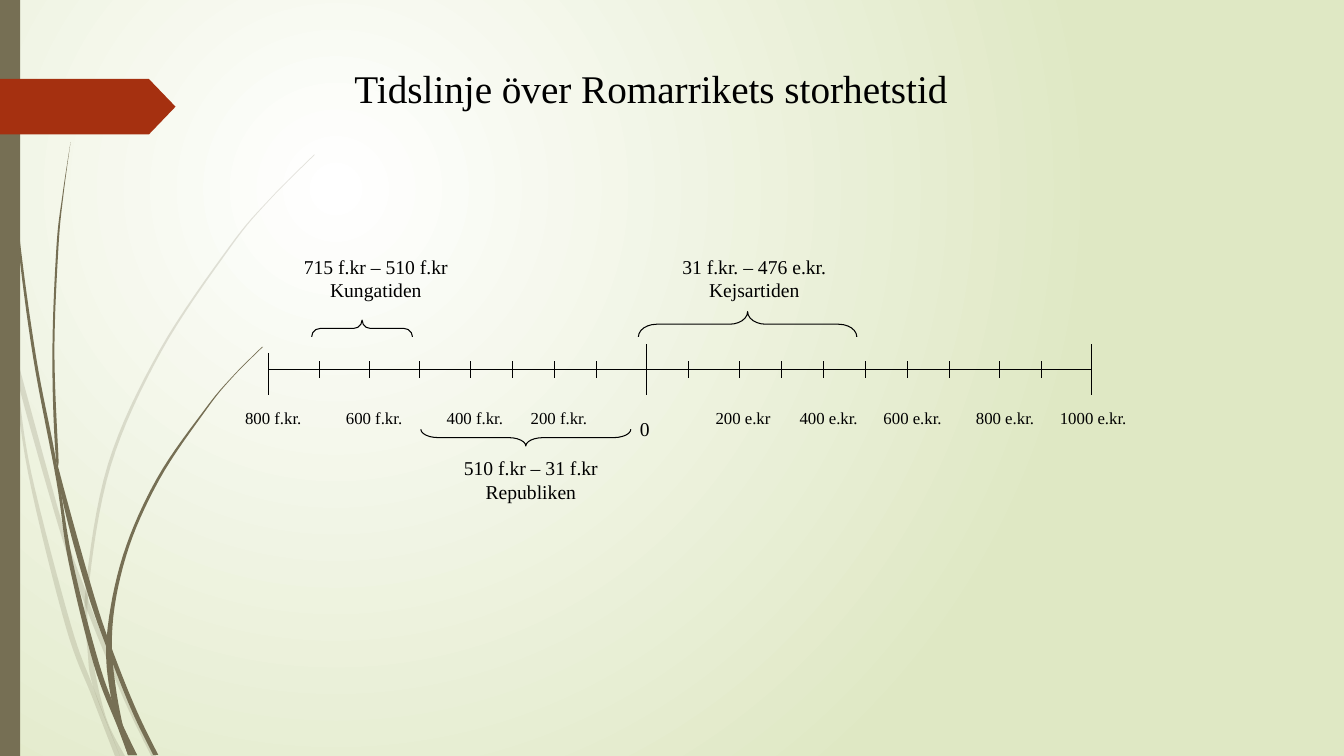
from lxml import etree
from pptx import Presentation
from pptx import util as u
from pptx.dml.color import RGBColor
from pptx.enum import shapes, text
from pptx.oxml.ns import qn

CELL = u.Inches(1) / 12  # the slide is a grid of 160 columns by 90 rows
COLUMNS, ROWS = 160, 90
FONT = "Times New Roman"
COLOURS = {"ink": "000000", "stem": "766F54", "arrow": "A53010",
           "glow": "FFFFFF", "field": "DFE8C4"}

AXIS_ROW = 44
CENTURY_COLUMNS = [32, 38, 44, 50, 56, 61, 66, 71, 77, 82,
                   88, 93, 98, 103, 108, 113, 119, 124, 130]
TALL_TICK_TOPS = {32: 42, 77: 41, 130: 41}

# label, column, width
YEARS = [("800 f.kr.", 28, 11), ("600 f.kr.", 40, 11), ("400 f.kr.", 52, 9.2),
         ("200 f.kr.", 62, 9.2), ("200 e.kr", 84, 9.2), ("400 e.kr.", 94, 9.5),
         ("600 e.kr.", 104, 9.5), ("800 e.kr.", 115, 9.5), ("1000 e.kr.", 125, 10.6)]

# lines, caption column, caption row, brace (kind, left, top, span, depth, curl)
PERIODS = [
    (("715 f.kr – 510 f.kr", "Kungatiden"), 34.75, 29.7,
     ("LEFT_BRACE", 37.1, 38.1, 12, 2, 0.5)),
    (("510 f.kr – 31 f.kr", "Republiken"), 53.2, 53.7,
     ("RIGHT_BRACE", 50.1, 51.1, 25, 2, 1.04)),
    (("31 f.kr. – 476 e.kr.", "Kejsartiden"), 79.8, 29.7,
     ("LEFT_BRACE", 76, 37.1, 26, 3, 0.72)),
]

# Left and right edge of each grass stem, in inches
PALE_STEMS = [
    ([(0, 2.82), (0.11, 3.5), (0.28, 4.7), (0.65, 6.21), (0.92, 6.93), (1.14, 7.5)],
     [(0, 2.82), (0.09, 3.22), (0.17, 3.76), (0.31, 4.69), (0.7, 6.19),
      (0.93, 6.83), (1.19, 7.5)]),
    ([(0.14, 3.45), (0.17, 3.76), (0.58, 5.22), (0.84, 5.99), (1.23, 6.94), (1.5, 7.5)],
     [(0.14, 3.45), (0.62, 5.2), (0.85, 5.86), (0.92, 6.07), (1.27, 6.92), (1.55, 7.5)]),
    ([(3.12, 1.53), (2.68, 1.97), (2.28, 2.44), (1.58, 3.48), (1.07, 4.61),
      (0.85, 5.84), (0.87, 6.46), (0.93, 6.83), (1.19, 7.5)],
     [(3.12, 1.54), (2.68, 1.98), (2.29, 2.45), (1.6, 3.49), (1.1, 4.62),
      (0.88, 5.84), (0.91, 6.46), (1.05, 7.11), (1.24, 7.5)]),
]
DARK_STEMS = [
    ([(0.03, 0), (0.07, 1.1), (0.17, 2.33), (0.33, 3.55), (0.56, 4.77),
      (0.68, 5.57), (0.93, 6.59), (1.17, 7.22), (1.27, 7.49)],
     [(0.04, 0), (0.08, 1.09), (0.19, 2.32), (0.36, 3.55), (0.55, 4.53),
      (0.72, 5.56), (0.98, 6.57), (1.16, 7.06), (1.36, 7.49)]),
    ([(0.7, 1.41), (0.62, 1.93), (0.56, 2.45), (0.52, 3.49), (0.55, 4.49),
      (0.64, 5.05), (0.88, 5.92), (1.11, 6.56), (1.32, 7.08), (1.52, 7.49)],
     [(0.7, 1.41), (0.63, 1.93), (0.58, 2.45), (0.54, 3.49), (0.58, 4.53),
      (0.6, 4.72), (0.93, 5.9), (1.13, 6.49), (1.36, 7.06), (1.57, 7.49)]),
    ([(2.6, 3.44), (2.31, 3.73), (2.04, 4.05), (1.56, 4.74), (1.22, 5.51),
      (1.06, 6.31), (1.1, 6.91), (1.27, 7.49)],
     [(2.61, 3.44), (2.31, 3.74), (2.05, 4.06), (1.58, 4.76), (1.25, 5.52),
      (1.11, 6.33), (1.21, 7.16), (1.36, 7.49)]),
]


def cells(*counts):
    return [round(count * CELL) for count in counts]


def colour(name):
    return RGBColor.from_string(COLOURS[name])


def paint_background(slide):
    """Fill with a circular gradient centred a quarter in from the top left."""
    fill = slide.background.fill
    fill.gradient()
    for stop, name, position in zip(fill.gradient_stops, ("glow", "field"), (0, 1)):
        stop.color.rgb = colour(name)
        stop.position = position
    gradient = slide._element.find(".//" + qn("a:gradFill"))
    gradient.remove(gradient.find(qn("a:lin")))
    circle = etree.SubElement(gradient, qn("a:path"), {"path": "circle"})
    etree.SubElement(circle, qn("a:fillToRect"),
                     {"l": "50000", "t": "50000", "r": "100000", "b": "100000"})


def smooth(points, steps=8):
    """Return points in EMU on a Catmull-Rom curve through the given points."""
    padded = [points[0], *points, points[-1]]
    curve = []
    for a, b, c, d in zip(padded, padded[1:], padded[2:], padded[3:]):
        for t in (step / steps for step in range(steps)):
            curve.append(tuple(
                u.Inches(q + t * (r - p) / 2 + t ** 2 * (2 * p - 5 * q + 4 * r - s) / 2
                         + t ** 3 * (3 * q - p - 3 * r + s) / 2)
                for p, q, r, s in zip(a, b, c, d)))
    return curve + [tuple(u.Inches(value) for value in points[-1])]


def paint(shape, name, opacity=1):
    shape.shadow.inherit = False
    shape.line.fill.background()
    shape.fill.solid()
    shape.fill.fore_color.rgb = colour(name)
    if opacity < 1:
        tint = shape._element.spPr.find(".//" + qn("a:srgbClr"))
        etree.SubElement(tint, qn("a:alpha"), {"val": str(round(opacity * 100000))})


def add_stem(slide, left_edge, right_edge, opacity):
    outline = smooth(left_edge) + smooth(right_edge)[::-1]
    builder = slide.shapes.build_freeform(*outline[0])
    builder.add_line_segments(outline[1:], close=True)
    paint(builder.convert_to_shape(), "stem", opacity)


def add_block(slide, kind, left, top, width, height):
    return slide.shapes.add_shape(kind, *cells(left, top, width, height))


def add_decoration(slide):
    for stems, opacity in ((PALE_STEMS, 0.2), (DARK_STEMS, 1)):
        for left_edge, right_edge in stems:
            add_stem(slide, left_edge, right_edge, opacity)
    kinds = shapes.MSO_SHAPE
    paint(add_block(slide, kinds.RECTANGLE, 0, 0, 2.4, ROWS), "stem")
    arrow = add_block(slide, kinds.PENTAGON, 0, 9.4, 20.9, 6.6)
    arrow.adjustments[0] = 0.48
    paint(arrow, "arrow")


def ink_line(line):
    line.color.rgb = colour("ink")
    line.width = u.Pt(0.75)


def add_line(slide, *ends):
    line = slide.shapes.add_connector(shapes.MSO_CONNECTOR.STRAIGHT, *cells(*ends))
    ink_line(line.line)
    etree.SubElement(line._element.spPr, qn("a:effectLst"))


def add_brace(slide, kind, left, top, span, depth, curl):
    """Add a brace lying on its side; left and top are those of the turned shape."""
    shift = (span - depth) / 2
    brace = add_block(slide, getattr(shapes.MSO_SHAPE, kind),
                      left + shift, top - shift, depth, span)
    brace.rotation = 90
    brace.adjustments[0] = curl
    brace.shadow.inherit = False
    brace.fill.background()
    ink_line(brace.line)


def write(shape, *lines, size, align=text.PP_ALIGN.LEFT):
    frame = shape.text_frame
    frame.word_wrap = True
    frame.auto_size = text.MSO_AUTO_SIZE.NONE
    frame.vertical_anchor = text.MSO_ANCHOR.TOP
    frame.text = "\n".join(lines)
    for paragraph in frame.paragraphs:
        paragraph.alignment = align
        font = paragraph.runs[0].font
        font.name, font.size = FONT, u.Pt(size)
        font.color.rgb = colour("ink")


def add_text(slide, box, *lines, **style):
    write(slide.shapes.add_textbox(*cells(*box)), *lines, **style)


def add_timeline(slide):
    add_line(slide, CENTURY_COLUMNS[0], AXIS_ROW, CENTURY_COLUMNS[-1], AXIS_ROW)
    for column in CENTURY_COLUMNS:
        tall = column in TALL_TICK_TOPS
        add_line(slide, column, TALL_TICK_TOPS.get(column, 43), column, 47 if tall else 45)
    for year, column, width in YEARS:
        add_text(slide, (column, 48, width, 3.7), year, size=12)
    add_text(slide, (75, 49, 4, 4), "0", size=14)


def main():
    deck = Presentation()
    deck.slide_width, deck.slide_height = cells(COLUMNS, ROWS)
    slide = deck.slides.add_slide(deck.slide_layouts.get_by_name("Title Only"))
    paint_background(slide)
    add_decoration(slide)
    title = slide.shapes.title
    title.left, title.top, title.width, title.height = cells(41, 7, 74, 6.8)
    write(title, "Tidslinje över Romarrikets storhetstid", size=28)
    add_timeline(slide)
    for lines, column, row, brace in PERIODS:
        add_brace(slide, *brace)
        add_text(slide, (column, row, 20, 6.9), *lines, size=14,
                 align=text.PP_ALIGN.CENTER)
    deck.save("out.pptx")


if __name__ == "__main__":
    main()
